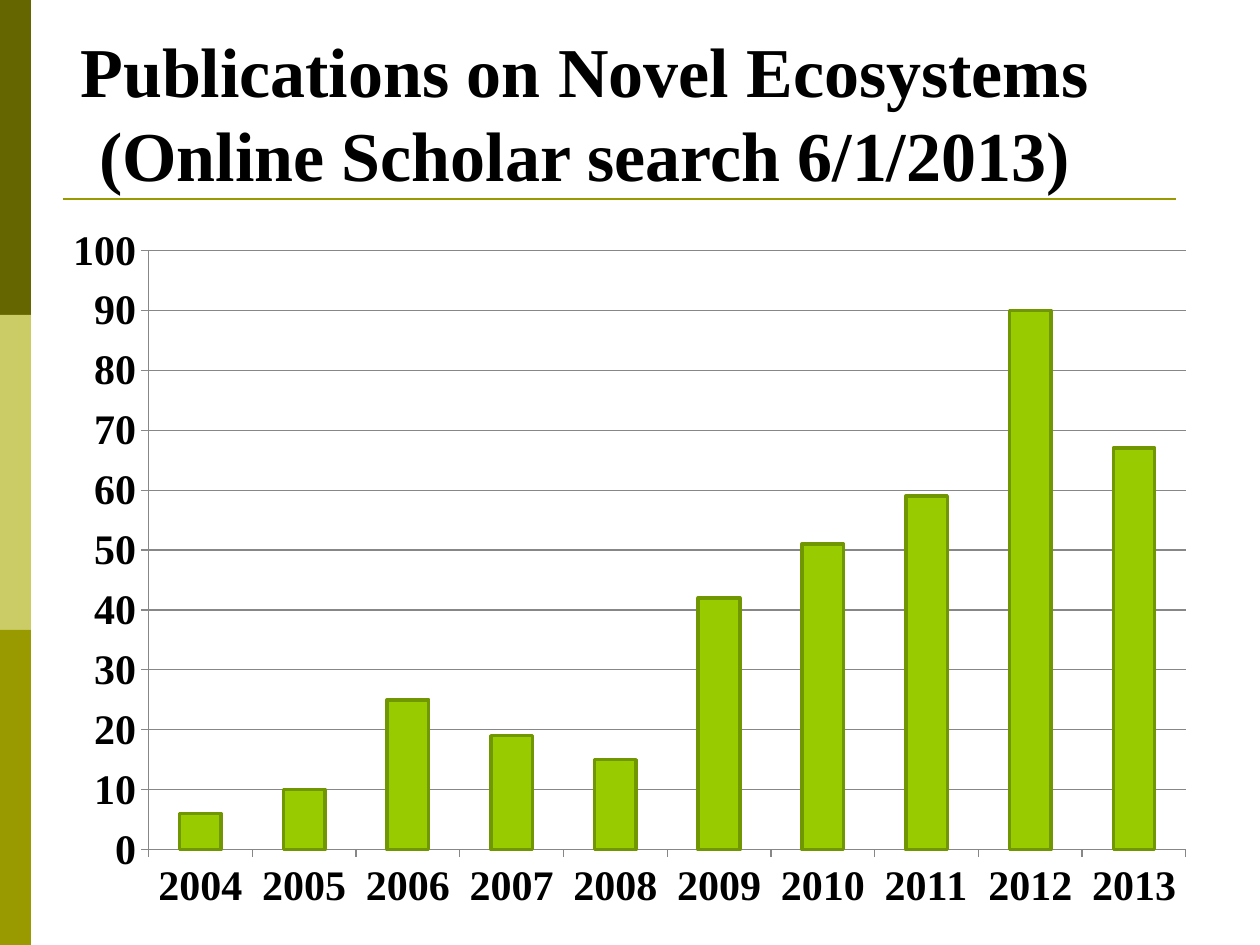
"""Build a slide with a column chart of yearly publications on novel ecosystems."""
from lxml.etree import SubElement
from pptx import Presentation
from pptx.chart.data import CategoryChartData
from pptx.dml.color import RGBColor
from pptx.enum.chart import XL_CHART_TYPE, XL_TICK_MARK
from pptx.enum.shapes import MSO_CONNECTOR, MSO_SHAPE
from pptx.enum.text import MSO_ANCHOR, PP_ALIGN
from pptx.oxml.ns import qn
from pptx.util import Pt

FONT = "Times New Roman"


def px(n):
    return round(n * 914400 / 126)


def paint(fmt, hue):
    fmt.solid()
    fmt.fore_color.rgb = RGBColor.from_string(hue)


deck = Presentation()
deck.slide_width, deck.slide_height = px(1260), px(945)
slide = deck.slides.add_slide(deck.slide_layouts[5])
shapes = slide.shapes

for row, hue in enumerate(["666600", "CCCC66", "999900"]):
    band = shapes.add_shape(MSO_SHAPE.RECTANGLE, 0, px(315 * row), px(31), px(315))
    band.shadow.inherit = False
    paint(band.fill, hue)
    band.line.fill.background()

rule = shapes.add_connector(MSO_CONNECTOR.STRAIGHT, px(63), px(199), px(1176), px(199))
paint(rule.line.fill, "999900")
rule.line.width = Pt(1.5)
SubElement(rule._element.spPr, qn("a:effectLst"))

title = shapes.title
title.left, title.top, title.width, title.height = px(62), px(21), px(1045), px(183)
frame = title.text_frame
frame.text = "Publications on Novel Ecosystems\n(Online Scholar search 6/1/2013)"
frame.word_wrap = False
frame.vertical_anchor = MSO_ANCHOR.TOP
for para in frame.paragraphs:
    para.alignment = PP_ALIGN.CENTER
    para.font.name, para.font.size, para.font.bold = FONT, Pt(40), True
    paint(para.font.fill, "000000")

data = CategoryChartData()
data.categories = [str(year) for year in range(2004, 2014)]
data.add_series("Series 1", [6, 10, 25, 19, 15, 42, 51, 59, 90, 67])
chart = shapes.add_chart(
    XL_CHART_TYPE.COLUMN_CLUSTERED, px(40), px(210), px(1167), px(714), data
).chart
chart.has_legend = False
chart.has_title = False
chart.font.name, chart.font.size, chart.font.bold = FONT, Pt(24), True
paint(chart.font.fill, "000000")

plot = chart.plots[0]
plot.gap_width = 150
plot.vary_by_categories = False
bars = plot.series[0].format
paint(bars.fill, "99CC00")
paint(bars.line.fill, "719700")
bars.line.width = Pt(2)

scale = chart.value_axis
scale.minimum_scale, scale.maximum_scale, scale.major_unit = 0, 100, 10
scale.has_major_gridlines = True
for axis in (chart.category_axis, scale):
    axis.major_tick_mark = XL_TICK_MARK.OUTSIDE
for part in (chart.category_axis, scale, scale.major_gridlines):
    paint(part.format.line.fill, "878787")
    part.format.line.width = Pt(0.75)

area = chart._chartSpace.chart.plotArea
for old in area.findall(qn("c:layout")):
    area.remove(old)
layout = SubElement(area, qn("c:layout"))
area.insert(0, layout)
manual = SubElement(layout, qn("c:manualLayout"))
places = {
    "layoutTarget": "inner", "xMode": "edge", "yMode": "edge",
    "x": 0.093, "y": 0.057, "w": 0.889, "h": 0.839,
}
for tag, value in places.items():
    SubElement(manual, qn("c:" + tag)).set("val", str(value))

deck.save("out.pptx")
